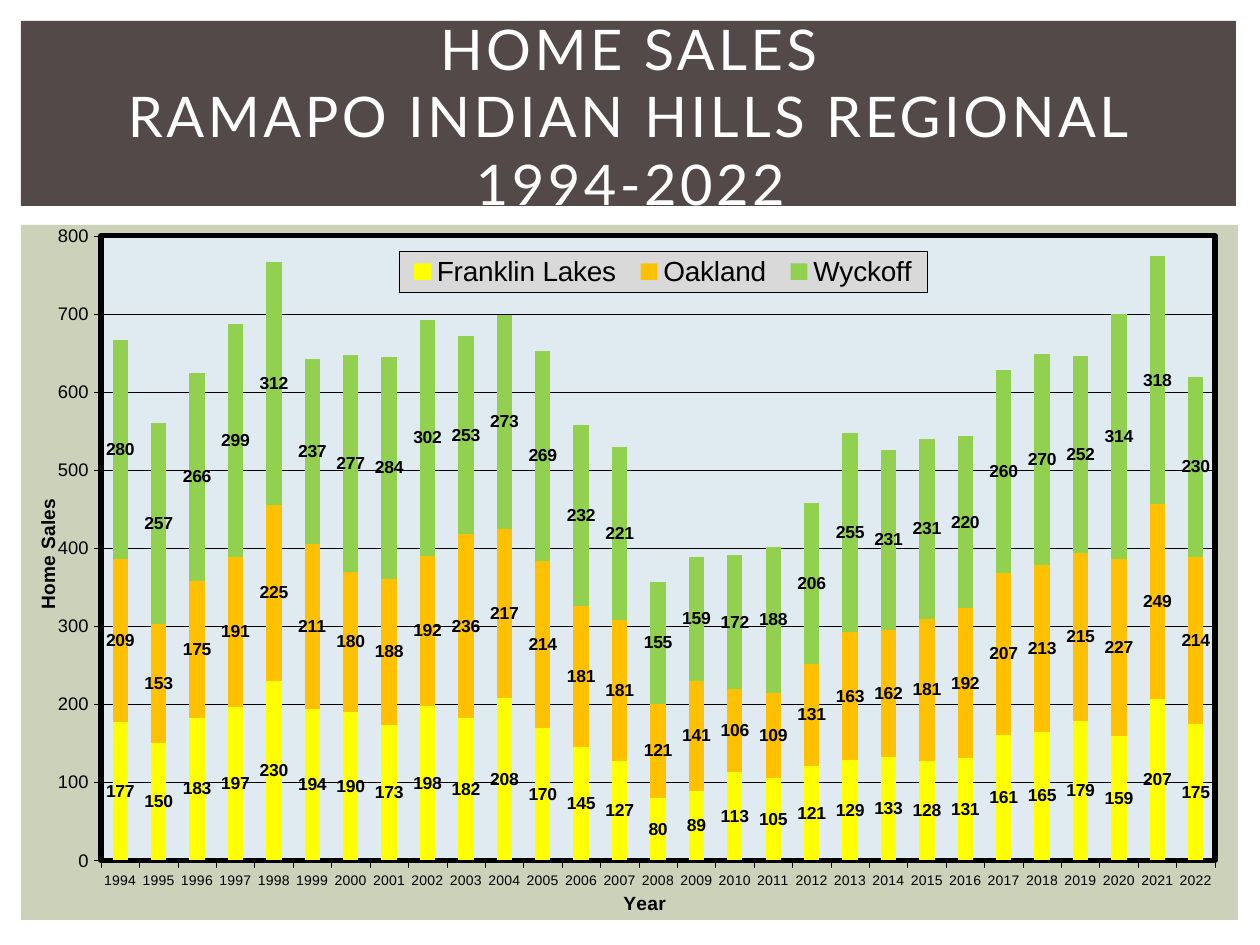
from dataclasses import dataclass

from lxml import etree
from pptx import Presentation
from pptx import util as u
from pptx.chart.data import CategoryChartData
from pptx.dml.color import RGBColor
from pptx.enum import chart as ch, shapes, text
from pptx.oxml import parse_xml
from pptx.oxml.ns import nsdecls, qn


@dataclass(frozen=True)
class Theme:
    """Colours and type sizes."""
    band: str = "534949"
    panel: str = "CCD1B9"
    plot: str = "DFEBF1"
    key: str = "D9D9D9"
    ink: str = "000000"
    white: str = "FFFFFF"
    bars: tuple = ("FFFF00", "FFC000", "92D050")
    head: str = "Lato"
    body: str = "Arial"
    title: float = 32
    legend: float = 16
    axis: float = 11
    scale: float = 10.5
    label: float = 10
    year: float = 8


T = Theme()
YEARS = range(1994, 2023)
SALES = {
    "Franklin Lakes": (177, 150, 183, 197, 230, 194, 190, 173, 198, 182, 208, 170, 145, 127, 80,
                       89, 113, 105, 121, 129, 133, 128, 131, 161, 165, 179, 159, 207, 175),
    "Oakland": (209, 153, 175, 191, 225, 211, 180, 188, 192, 236, 217, 214, 181, 181, 121,
                141, 106, 109, 131, 163, 162, 181, 192, 207, 213, 215, 227, 249, 214),
    "Wyckoff": (280, 257, 266, 299, 312, 237, 277, 284, 302, 253, 273, 269, 232, 221, 155,
                159, 172, 188, 206, 255, 231, 231, 220, 260, 270, 252, 314, 318, 230),
}


def px(num):
    """Turn px into EMU."""
    return u.Emu(round(num * 914400 / 126))


def style(font, size, name=T.body, hue=T.ink, bold=False):
    """Set the look of a font."""
    font.size, font.name, font.bold = u.Pt(size), name, bold
    font.color.rgb = RGBColor.from_string(hue)


def panel(slide, box, hue):
    """Add a plain filled rectangle."""
    shape = slide.shapes.add_shape(shapes.MSO_SHAPE.RECTANGLE, *map(px, box))
    shape.shadow.inherit = False
    shape.fill.solid()
    shape.fill.fore_color.rgb = RGBColor.from_string(hue)
    shape.line.fill.background()


def header(slide, box, lines):
    """Add the title band with centred lines."""
    panel(slide, box, T.band)
    left, top, wide, high = box
    area = slide.shapes.add_textbox(*map(px, (left + 32, top + 16, wide - 60, high - 28)))
    frame = area.text_frame
    frame.word_wrap = True
    frame.vertical_anchor = text.MSO_ANCHOR.MIDDLE
    para = frame.paragraphs[0]
    para.alignment = text.PP_ALIGN.CENTER
    for num, line in enumerate(lines):
        if num:
            para.add_line_break()
        run = para.add_run()
        run.text = line
        style(run.font, T.title, T.head, T.white)
        run.font._element.set("spc", "200")


def layout(box, size, inner=False):
    """Make a manual layout from px within a chart of the given size."""
    parts = ['<c:layoutTarget val="inner"/>'] if inner else []
    names = "xywh"[:len(box)]
    parts += [f'<c:{key}Mode val="edge"/>' for key in names[:2]]
    parts += [f'<c:{key} val="{num / size[i % 2]:.4f}"/>'
              for i, (key, num) in enumerate(zip(names, box))]
    return parse_xml(f'<c:layout {nsdecls("c")}><c:manualLayout>{"".join(parts)}'
                     '</c:manualLayout></c:layout>')


def fill(host, hue, width):
    """Give a chart part a fill and a black outline."""
    props = parse_xml(
        f'<c:spPr {nsdecls("c", "a")}><a:solidFill><a:srgbClr val="{hue}"/></a:solidFill>'
        f'<a:ln w="{u.Pt(width)}"><a:solidFill><a:srgbClr val="{T.ink}"/></a:solidFill>'
        '</a:ln></c:spPr>')
    notes = host.find(qn("c:txPr"))
    if notes is None:
        host.append(props)
    else:
        notes.addprevious(props)


def place(host, after, item):
    """Put a layout right after the named child."""
    for old in host.findall(qn("c:layout")):
        host.remove(old)
    if after:
        host.find(qn(after)).addnext(item)
    else:
        host.insert(0, item)


def thin(line):
    """Make a hairline in ink."""
    line.color.rgb = RGBColor.from_string(T.ink)
    line.width = u.Pt(0.25)


def axis(item, name, size, spot, area):
    """Style one axis and place its title."""
    style(item.tick_labels.font, size)
    item.major_tick_mark = ch.XL_TICK_MARK.OUTSIDE
    item.minor_tick_mark = ch.XL_TICK_MARK.NONE
    thin(item.format.line)
    run = item.axis_title.text_frame.paragraphs[0].add_run()
    run.text = name
    style(run.font, T.axis, bold=True)
    place(item.axis_title._element, "c:tx", layout(spot, area))


def legend(chart, box, area):
    """Add the boxed legend over the plot."""
    chart.has_legend = True
    key = chart.legend
    key.position = ch.XL_LEGEND_POSITION.TOP
    key.include_in_layout = False
    style(key.font, T.legend)
    place(key._element, "c:legendPos", layout(box, area))
    fill(key._element, T.key, 0.25)


def graph(slide, box):
    """Add the stacked column chart on its panel."""
    left, top, wide, high = box
    panel(slide, (left, top, wide + 6, high), T.panel)
    data = CategoryChartData()
    data.categories = [str(year) for year in YEARS]
    for name, vals in SALES.items():
        data.add_series(name, vals)
    chart = slide.shapes.add_chart(ch.XL_CHART_TYPE.COLUMN_STACKED, *map(px, box), data).chart
    chart.has_title = False
    style(chart.font, T.label)
    area = (wide, high)
    axis(chart.category_axis, "Year", T.year, (599, 667), area)
    axis(chart.value_axis, "Home Sales", T.scale, (10, 273), area)
    scale = chart.value_axis
    scale.minimum_scale, scale.maximum_scale, scale.major_unit = 0, 800, 100
    scale.has_major_gridlines = True
    thin(scale.major_gridlines.format.line)
    plot = chart.plots[0]
    plot.gap_width, plot.overlap, plot.vary_by_categories = 150, 100, False
    for bar, hue in zip(plot.series, T.bars):
        bar.format.fill.solid()
        bar.format.fill.fore_color.rgb = RGBColor.from_string(hue)
        bar.invert_if_negative = False
        tags = bar.data_labels
        tags.show_value = True
        tags.position = ch.XL_LABEL_POSITION.CENTER
        style(tags.font, T.label, bold=True)
    field = chart._chartSpace.chart.plotArea
    place(field, None, layout((80, 11, 1114, 630), area, True))
    fill(field, T.plot, 3)
    legend(chart, (378, 26, 528, 42), area)


def main():
    """Build and save the slide."""
    deck = Presentation()
    deck.slide_width, deck.slide_height = px(1260), px(945)
    slide = deck.slides.add_slide(deck.slide_layouts[6])
    header(slide, (21, 21, 1215, 185),
           ("HOME SALES", "RAMAPO INDIAN HILLS REGIONAL", "1994-2022"))
    graph(slide, (21, 225, 1211, 695))
    deck.save("out.pptx")


if __name__ == "__main__":
    main()
